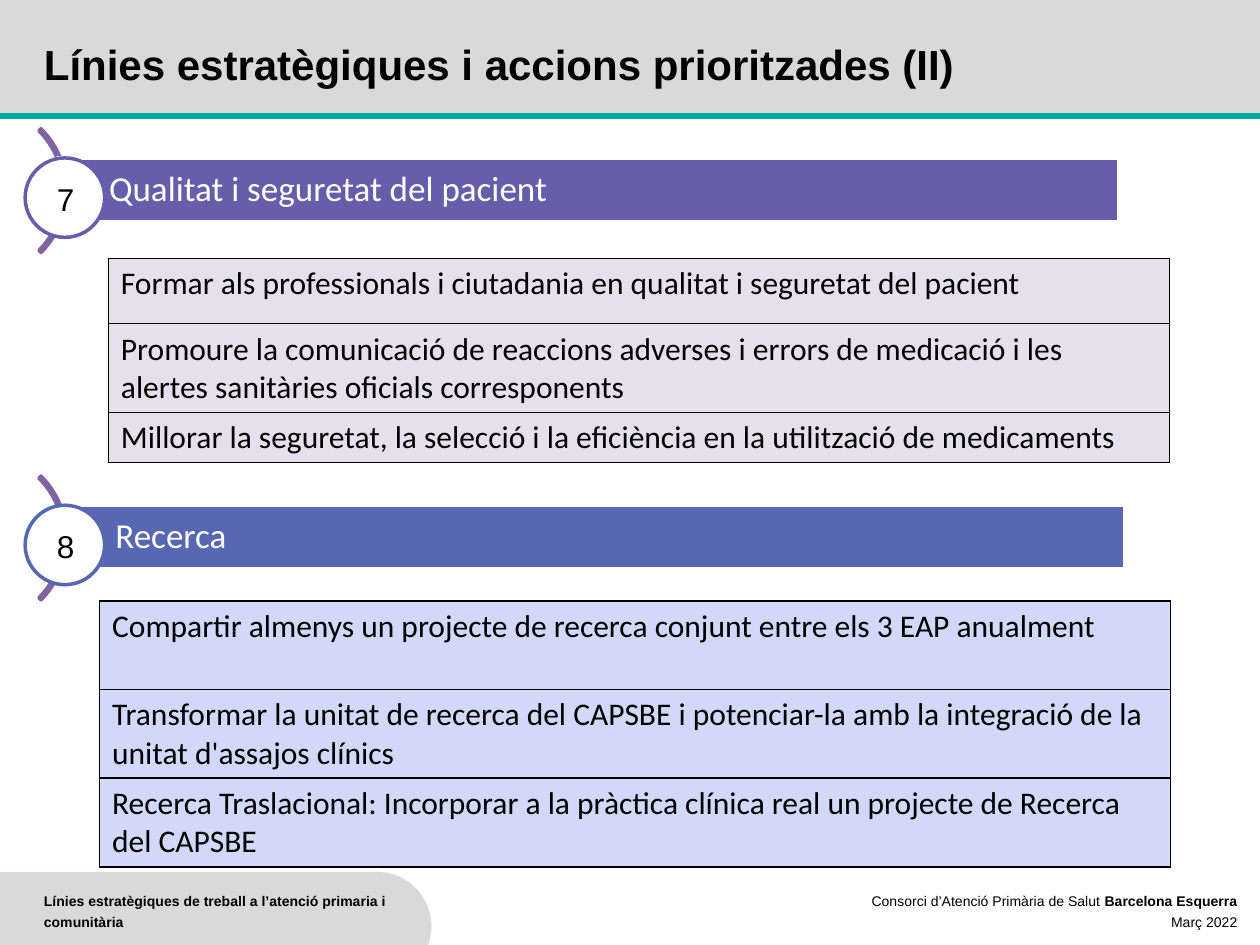
from dataclasses import dataclass

import lxml.etree
import pptx
import pptx.dml.color
import pptx.enum.shapes
import pptx.enum.text
import pptx.oxml.ns
import pptx.util

Pt = pptx.util.Pt
SHAPE = pptx.enum.shapes.MSO_SHAPE
ALIGN = pptx.enum.text.PP_ALIGN
ANCHOR = pptx.enum.text.MSO_ANCHOR
qn = pptx.oxml.ns.qn


@dataclass(frozen=True)
class Theme:
    heading_font: str = "Arial"
    body_font: str = "Calibri"
    title_size: int = 24
    banner_size: int = 20
    body_size: int = 18
    footer_size: int = 8
    black: str = "000000"
    white: str = "FFFFFF"
    grey: str = "D9D9D9"
    teal: str = "00AA9E"
    arc: str = "8064A2"
    quality: str = "685DAB"
    quality_tint: str = "E6E0EC"
    research: str = "5767B4"
    research_tint: str = "D2D8F7"


THEME = Theme()


def rgb(colour):
    return pptx.dml.color.RGBColor.from_string(colour)


def add_block(slide, preset, box, fill, outline=None):
    block = slide.shapes.add_shape(preset, *map(Pt, box))
    block.shadow.inherit = False
    block.fill.solid()
    block.fill.fore_color.rgb = rgb(fill)
    if outline:
        block.line.color.rgb = rgb(outline)
        block.line.width = Pt(2)
    else:
        block.line.fill.background()
    return block


def add_run(paragraph, words, font, size, colour, bold=False):
    run = paragraph.add_run()
    run.text = words
    run.font.name = font
    run.font.size = Pt(size)
    run.font.bold = bold
    run.font.color.rgb = rgb(colour)


def add_label(slide, box, lines, size, spacing=None, align=ALIGN.LEFT):
    """Heading-font text; each line is a list of (words, bold) runs."""
    frame = slide.shapes.add_textbox(*map(Pt, box)).text_frame
    frame.word_wrap = True
    for index, runs in enumerate(lines):
        paragraph = frame.add_paragraph() if index else frame.paragraphs[0]
        paragraph.alignment = align
        if spacing:
            paragraph.line_spacing = Pt(spacing)
        for words, bold in runs:
            add_run(paragraph, words, THEME.heading_font, size, THEME.black, bold)


def add_title_band(slide, box, title):
    left, top, width, height = box
    add_block(slide, SHAPE.RECTANGLE, box, THEME.grey)
    bottom = top + height
    rule = slide.shapes.add_connector(
        pptx.enum.shapes.MSO_CONNECTOR.STRAIGHT,
        Pt(left), Pt(bottom), Pt(left + width), Pt(bottom))
    rule.line.color.rgb = rgb(THEME.teal)
    rule.line.width = Pt(3)
    lxml.etree.SubElement(rule._element.spPr, qn("a:effectLst"))
    add_label(slide, (left + 18, top + 25.2, 614, 29.5),
              [[(title, True)]], THEME.title_size, 22)


def add_footer(slide, box, topic, issuer_lines):
    left, top, width, height = box
    add_block(slide, SHAPE.RECTANGLE, (left, top, 217.5, height), THEME.grey)
    add_block(slide, SHAPE.OVAL, (left + 184.5, top, 62, 62), THEME.grey)
    add_label(slide, (left + 18, top + 5.75, 217.5, 34),
              [[(topic, True)]], THEME.footer_size, 12)
    add_label(slide, (left + width - 234, top + 5.75, 228.25, 36),
              issuer_lines, THEME.footer_size, 12, ALIGN.RIGHT)


def add_strategy_header(slide, box, number, name, colour):
    """Numbered disc on an arc, with the banner filling the box."""
    left, top, width, height = box
    disc_left, disc_size, arc_size = 14.4, 45.4, 100
    disc_middle = top + disc_size / 2
    arc = add_block(slide, SHAPE.BLOCK_ARC,
                    (-61.9, disc_middle - arc_size / 2 - 4, arc_size, arc_size),
                    THEME.arc, THEME.arc)
    for index, value in enumerate((189, 27, 0.017)):
        arc.adjustments[index] = value

    banner = add_block(slide, SHAPE.RECTANGLE, box, colour, THEME.white)
    frame = banner.text_frame
    frame.word_wrap = True
    frame.vertical_anchor = ANCHOR.MIDDLE
    frame.margin_left = Pt(29.2)
    frame.margin_top = frame.margin_right = frame.margin_bottom = Pt(4)
    paragraph = frame.paragraphs[0]
    paragraph.alignment = ALIGN.LEFT
    paragraph.line_spacing = 0.9
    add_run(paragraph, name, THEME.body_font, THEME.banner_size, THEME.white)

    add_block(slide, SHAPE.OVAL, (disc_left, top, disc_size, disc_size),
              THEME.white, colour)
    add_label(slide, (disc_left + 11, top + 9, 27, 29),
              [[(number, False)]], THEME.body_size)


def add_cell_borders(cell):
    properties = cell._tc.get_or_add_tcPr()
    for side in ("lnL", "lnR", "lnT", "lnB"):
        border = lxml.etree.SubElement(properties, qn(f"a:{side}"), w=str(Pt(1)))
        fill = lxml.etree.SubElement(border, qn("a:solidFill"))
        lxml.etree.SubElement(fill, qn("a:srgbClr"), val=THEME.black)


def add_action_table(slide, box, actions, row_heights, tint):
    table = slide.shapes.add_table(len(actions), 1, *map(Pt, box)).table
    table.first_row = table.horz_banding = False
    for row, action, height in zip(table.rows, actions, row_heights):
        row.height = Pt(height)
        cell = row.cells[0]
        add_cell_borders(cell)
        cell.fill.solid()
        cell.fill.fore_color.rgb = rgb(tint)
        add_run(cell.text_frame.paragraphs[0], action,
                THEME.body_font, THEME.body_size, THEME.black)


def main():
    deck = pptx.Presentation()
    deck.slide_width, deck.slide_height = Pt(720), Pt(540)
    slide = deck.slides.add_slide(deck.slide_layouts[6])

    add_footer(slide, (0, 498.25, 720, 51.75),
               "Línies estratègiques de treball a l’atenció primaria i comunitària",
               [[("Consorci d’Atenció Primària de Salut ", False),
                 ("Barcelona Esquerra", True)],
                [("Març 2022", False)]])
    add_title_band(slide, (0, 0, 720, 66.25),
                   "Línies estratègiques i accions prioritzades (II)")

    add_strategy_header(slide, (33.1, 90.25, 606.25, 36.5), "7",
                        "Qualitat i seguretat del pacient", THEME.quality)
    add_action_table(slide, (61.9, 147.6, 606.25, 116.6), [
        "Formar als professionals i ciutadania en qualitat i seguretat del pacient",
        "Promoure la comunicació de reaccions adverses i errors de medicació i les "
        "alertes sanitàries oficials corresponents",
        "Millorar la seguretat, la selecció i la eficiència en la utilització de "
        "medicaments",
    ], (37.4, 50.6, 28.6), THEME.quality_tint)

    add_strategy_header(slide, (36.7, 288.75, 606.25, 36.5), "8",
                        "Recerca", THEME.research)
    add_action_table(slide, (56.9, 343.5, 612, 151.8), [
        "Compartir almenys un projecte de recerca conjunt entre els 3 EAP anualment",
        "Transformar la unitat de recerca del CAPSBE i potenciar-la amb la "
        "integració de la unitat d'assajos clínics",
        "Recerca Traslacional: Incorporar a la pràctica clínica real un projecte de "
        "Recerca del CAPSBE",
    ], (50.6, 50.6, 50.6), THEME.research_tint)

    deck.save("out.pptx")


if __name__ == "__main__":
    main()
